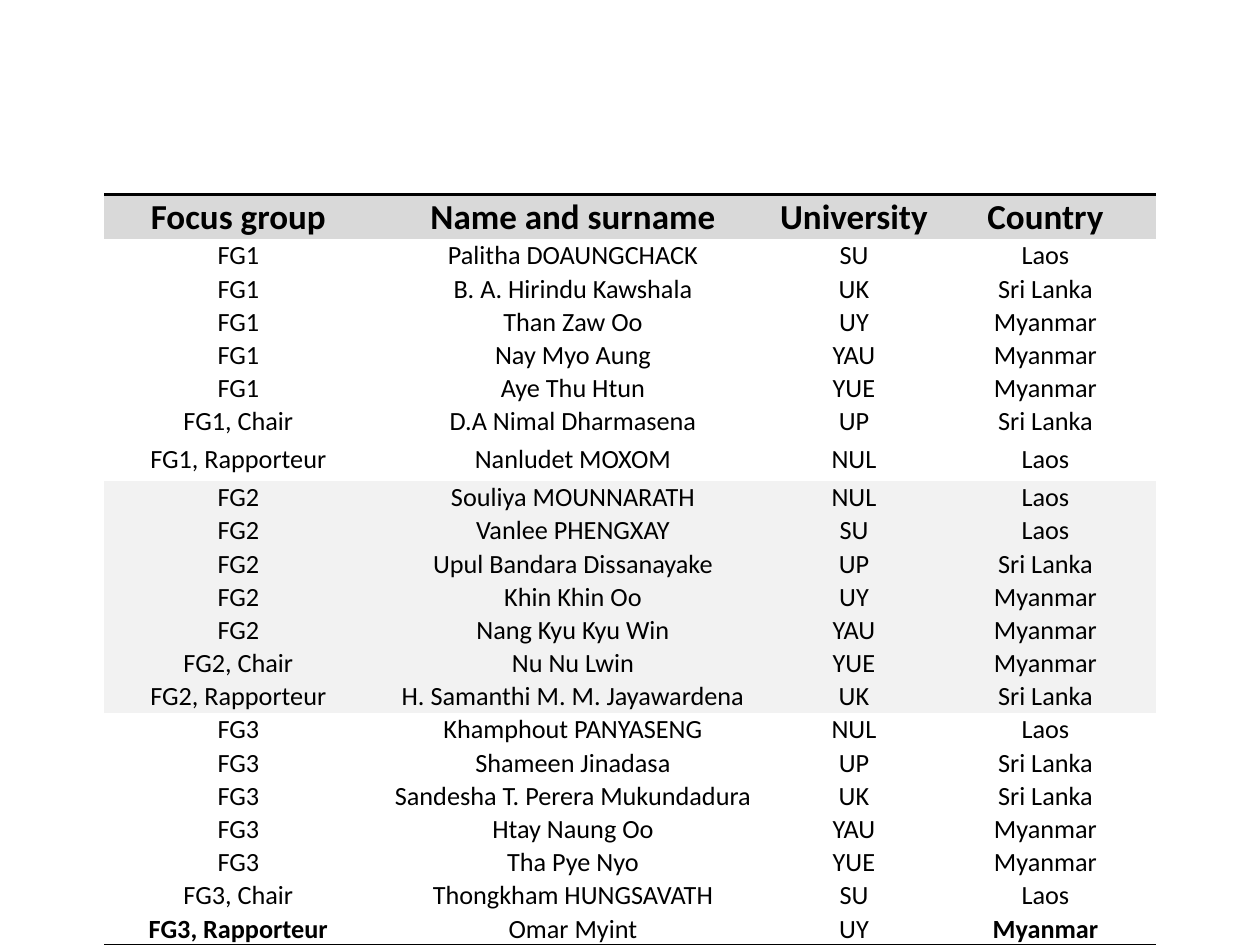
from lxml import etree
from pptx import Presentation
from pptx import util as u
from pptx.dml.color import RGBColor
from pptx.enum import text
from pptx.oxml.ns import qn

ROWS = [
    ("Focus group", "Name and surname", "University", "Country"),
    ("FG1", "Palitha DOAUNGCHACK", "SU", "Laos"),
    ("FG1", "B. A. Hirindu Kawshala", "UK", "Sri Lanka"),
    ("FG1", "Than Zaw Oo", "UY", "Myanmar"),
    ("FG1", "Nay Myo Aung", "YAU", "Myanmar"),
    ("FG1", "Aye Thu Htun", "YUE", "Myanmar"),
    ("FG1, Chair", "D.A Nimal Dharmasena", "UP", "Sri Lanka"),
    ("FG1, Rapporteur", "Nanludet MOXOM", "NUL", "Laos"),
    ("FG2", "Souliya MOUNNARATH", "NUL", "Laos"),
    ("FG2", "Vanlee PHENGXAY", "SU", "Laos"),
    ("FG2", "Upul Bandara Dissanayake", "UP", "Sri Lanka"),
    ("FG2", "Khin Khin Oo", "UY", "Myanmar"),
    ("FG2", "Nang Kyu Kyu Win", "YAU", "Myanmar"),
    ("FG2, Chair", "Nu Nu Lwin", "YUE", "Myanmar"),
    ("FG2, Rapporteur", "H. Samanthi M. M. Jayawardena", "UK", "Sri Lanka"),
    ("FG3", "Khamphout PANYASENG", "NUL", "Laos"),
    ("FG3", "Shameen Jinadasa", "UP", "Sri Lanka"),
    ("FG3", "Sandesha T. Perera Mukundadura", "UK", "Sri Lanka"),
    ("FG3", "Htay Naung Oo", "YAU", "Myanmar"),
    ("FG3", "Tha Pye Nyo", "YUE", "Myanmar"),
    ("FG3, Chair", "Thongkham HUNGSAVATH", "SU", "Laos"),
    ("FG3, Rapporteur", "Omar Myint", "UY", "Myanmar"),
]
LAST = len(ROWS) - 1
NO_STYLE = "{2D5ABB26-0587-4C30-8999-92F81FD0307C}"


def rgb(value):
    return RGBColor.from_string(value)


def fill_cell(cell, content, size=15, bold=False, fill="FFFFFF", anchor=text.MSO_ANCHOR.MIDDLE, border=None):
    cell.margin_left = cell.margin_right = cell.margin_top = u.Cm(0.02)
    cell.margin_bottom = 0
    cell.vertical_anchor = anchor
    p = cell.text_frame.paragraphs[0]
    p.alignment = text.PP_ALIGN.CENTER
    r = p.add_run()
    r.text = content
    r.font.name = "Calibri"
    r.font.size = u.Pt(size)
    r.font.bold = bold
    r.font.color.rgb = rgb("000000")
    if border:
        ln = etree.SubElement(cell._tc.get_or_add_tcPr(), qn(border), w=str(u.Pt(2)))
        solid = etree.SubElement(ln, qn("a:solidFill"))
        etree.SubElement(solid, qn("a:srgbClr"), val="000000")
    cell.fill.solid()
    cell.fill.fore_color.rgb = rgb(fill)


prs = Presentation()
prs.slide_width, prs.slide_height = u.Cm(25.4), u.Cm(19.05)
s = prs.slides.add_slide(prs.slide_layouts[6])

frame = s.shapes.add_table(len(ROWS), 4, u.Cm(2.1), u.Cm(3.93), u.Cm(21.21), u.Cm(14.92))
tbl = frame.table
tbl.first_row = tbl.horz_banding = False
tbl._tbl.tblPr.find(qn("a:tableStyleId")).text = NO_STYLE
for col, width in zip(tbl.columns, (5.41, 8.08, 3.25, 4.47)):
    col.width = u.Cm(width)

for i, row in enumerate(ROWS):
    tbl.rows[i].height = u.Cm(0.86 if i in (0, 7) else 0.66)
    for j, content in enumerate(row):
        cell = tbl.cell(i, j)
        if i == 0:
            fill_cell(cell, content, size=20, bold=True, fill="D9D9D9",
                      anchor=text.MSO_ANCHOR.BOTTOM, border="a:lnT")
        else:
            fill_cell(cell, content, bold=i == LAST and j in (0, 3),
                      fill="F2F2F2" if row[0].startswith("FG2") else "FFFFFF",
                      border="a:lnB" if i == LAST else None)

prs.save("out.pptx")
